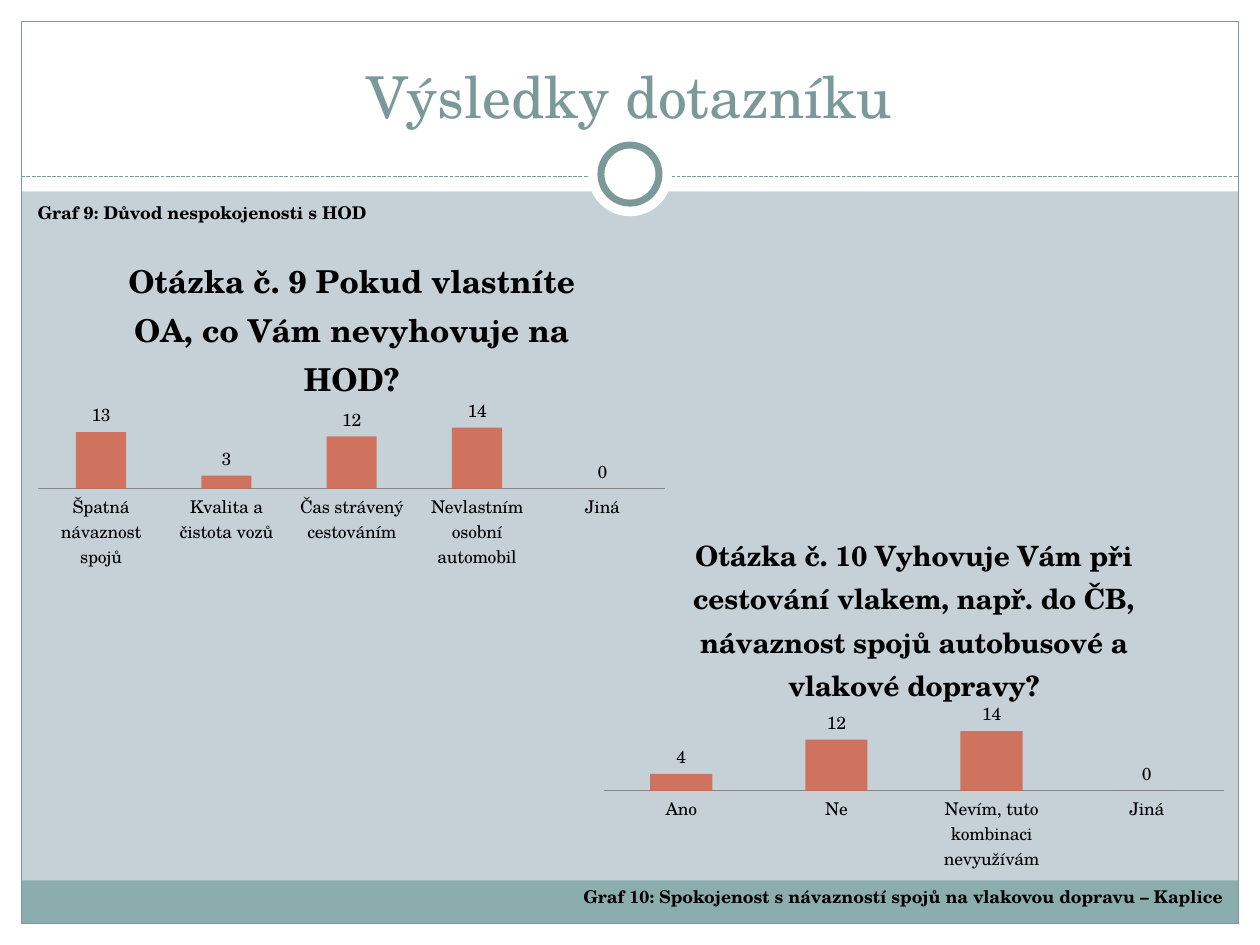
from lxml.etree import SubElement
from pptx import Presentation
from pptx.chart.data import CategoryChartData
from pptx.dml.color import RGBColor
from pptx.enum.chart import XL_CHART_TYPE, XL_LABEL_POSITION, XL_TICK_MARK
from pptx.enum.dml import MSO_LINE
from pptx.enum.shapes import MSO_CONNECTOR, MSO_SHAPE
from pptx.enum.text import MSO_ANCHOR, PP_ALIGN
from pptx.oxml.ns import qn
from pptx.util import Cm, Pt

HEADING = "Výsledky dotazníku"
QUESTIONS = [
    {
        "title": "Otázka č. 10 Vyhovuje Vám při cestování vlakem, např. do ČB, "
                 "návaznost spojů autobusové a vlakové dopravy?",
        "title_size": 16,
        "answers": [("Ano", 4), ("Ne", 12),
                    ("Nevím, tuto kombinaci nevyužívám", 14), ("Jiná", 0)],
        "area": (11.91, 10.31, 13.03, 7.39),
    },
    {
        "title": "Otázka č. 9 Pokud vlastníte OA, co Vám nevyhovuje na HOD?",
        "title_size": 18,
        "answers": [("Špatná návaznost spojů", 13), ("Kvalita a čistota vozů", 3),
                    ("Čas strávený cestováním", 12),
                    ("Nevlastním osobní automobil", 14), ("Jiná", 0)],
        "area": (0.51, 4.72, 13.16, 6.88),
    },
]
CAPTIONS = [
    ("Graf 10: Spokojenost s návazností spojů na vlakovou dopravu – Kaplice",
     (11.51, 17.73, 13.89, 0.69), True),
    ("Graf 9: Důvod nespokojenosti s HOD", (0.51, 3.94, 7.24, 0.69), False),
]

THEME = {
    "font": "TeX Gyre Schola", "heading_size": 33, "text_size": 10,
    "background": "C5D1D7", "paper": "FFFFFF", "accent": "7C999A",
    "footer": "8CADAE", "bar": "D16349", "axis": "868686", "text": "000000",
}
WIDTH, HEIGHT, MARGIN = 25.4, 19.05, 0.43
HEADER_HEIGHT, RULE_Y, RING_Y = 3.86, 3.56, 3.51
FOOTER_TOP, FOOTER_HEIGHT = 17.75, 0.86


def color(name):
    return RGBColor.from_string(THEME[name])


def apply(target, formats):
    for name, value in formats.items():
        setattr(target, name, value)


def style_font(font, size, ink="text", bold=False):
    apply(font, {"name": THEME["font"], "size": Pt(size), "bold": bold})
    font.color.rgb = color(ink)


def style_line(line, ink, width):
    line.color.rgb = color(ink)
    line.width = Pt(width)


def add_panel(slide, kind, area, fill=None, outline=0):
    panel = slide.shapes.add_shape(kind, *map(Cm, area))
    panel.shadow.inherit = False
    if fill:
        panel.fill.solid()
        panel.fill.fore_color.rgb = color(fill)
    else:
        panel.fill.background()
    if outline:
        style_line(panel.line, "accent", outline)
    else:
        panel.line.fill.background()


def add_text(slide, text, area, size, ink="text", bold=False, frame=None, align=None):
    box = slide.shapes.add_textbox(*map(Cm, area)).text_frame
    apply(box, {"word_wrap": True, **(frame or {})})
    paragraph = box.paragraphs[0]
    paragraph.alignment = align
    run = paragraph.add_run()
    run.text = text
    style_font(run.font, size, ink, bold)


def add_frame(slide):
    inner_width = WIDTH - 2 * MARGIN
    for area, fill in [
        ((0, HEIGHT - MARGIN, WIDTH, MARGIN), "paper"),
        ((0, 0, WIDTH, HEADER_HEIGHT), "paper"),
        ((0, 0, MARGIN, HEIGHT), "paper"),
        ((WIDTH - MARGIN, 0, MARGIN, HEIGHT), "paper"),
        ((MARGIN, FOOTER_TOP, inner_width, FOOTER_HEIGHT), "footer"),
    ]:
        add_panel(slide, MSO_SHAPE.RECTANGLE, area, fill)
    border = (MARGIN, MARGIN, inner_width, HEIGHT - 2 * MARGIN)
    add_panel(slide, MSO_SHAPE.RECTANGLE, border, outline=0.75)

    rule = slide.shapes.add_connector(
        MSO_CONNECTOR.STRAIGHT, Cm(MARGIN), Cm(RULE_Y), Cm(WIDTH - MARGIN), Cm(RULE_Y))
    style_line(rule.line, "accent", 0.75)
    rule.line.dash_style = MSO_LINE.SQUARE_DOT
    SubElement(rule._element.spPr, qn("a:effectLst"))

    for diameter, outline in [(1.7, 0), (1.17, 4)]:
        area = ((WIDTH - diameter) / 2, RING_Y - diameter / 2, diameter, diameter)
        add_panel(slide, MSO_SHAPE.OVAL, area, "paper", outline)


def add_question(slide, question):
    data = CategoryChartData()
    data.categories = [answer for answer, count in question["answers"]]
    data.add_series("Series 1", [count for answer, count in question["answers"]])
    chart = slide.shapes.add_chart(
        XL_CHART_TYPE.COLUMN_CLUSTERED, *map(Cm, question["area"]), data).chart
    style_font(chart.font, THEME["text_size"])
    apply(chart, {"has_legend": False, "has_title": True})

    title = chart.chart_title
    title.include_in_layout = False
    title.text_frame.text = question["title"]
    style_font(title.text_frame.paragraphs[0].runs[0].font,
               question["title_size"], bold=True)

    plot = chart.plots[0]
    apply(plot, {"gap_width": 150, "overlap": -25,
                 "vary_by_categories": False, "has_data_labels": True})
    apply(plot.data_labels, {"show_value": True,
                             "position": XL_LABEL_POSITION.OUTSIDE_END})
    style_font(plot.data_labels.font, THEME["text_size"])

    bars = plot.series[0].format.fill
    bars.solid()
    bars.fore_color.rgb = color("bar")
    tint = next(plot.series[0]._element.iter(qn("a:srgbClr")))
    SubElement(tint, qn("a:alpha"), val="85000")

    apply(chart.value_axis, {"visible": False, "has_major_gridlines": False})
    apply(chart.category_axis, {"major_tick_mark": XL_TICK_MARK.NONE,
                                "minor_tick_mark": XL_TICK_MARK.NONE})
    style_line(chart.category_axis.format.line, "axis", 0.75)


def main():
    deck = Presentation()
    apply(deck, {"slide_width": Cm(WIDTH), "slide_height": Cm(HEIGHT)})
    slide = deck.slides.add_slide(deck.slide_layouts[6])
    slide.background.fill.solid()
    slide.background.fill.fore_color.rgb = color("background")

    add_frame(slide)
    add_text(slide, HEADING, (0.84, 0.64, 23.7, 2.11), THEME["heading_size"], "accent",
             frame={"vertical_anchor": MSO_ANCHOR.BOTTOM}, align=PP_ALIGN.CENTER)
    for question in QUESTIONS:
        add_question(slide, question)
    for caption, area, wraps in CAPTIONS:
        add_text(slide, caption, area, THEME["text_size"], bold=True,
                 frame={"word_wrap": wraps})
    deck.save("out.pptx")


if __name__ == "__main__":
    main()
